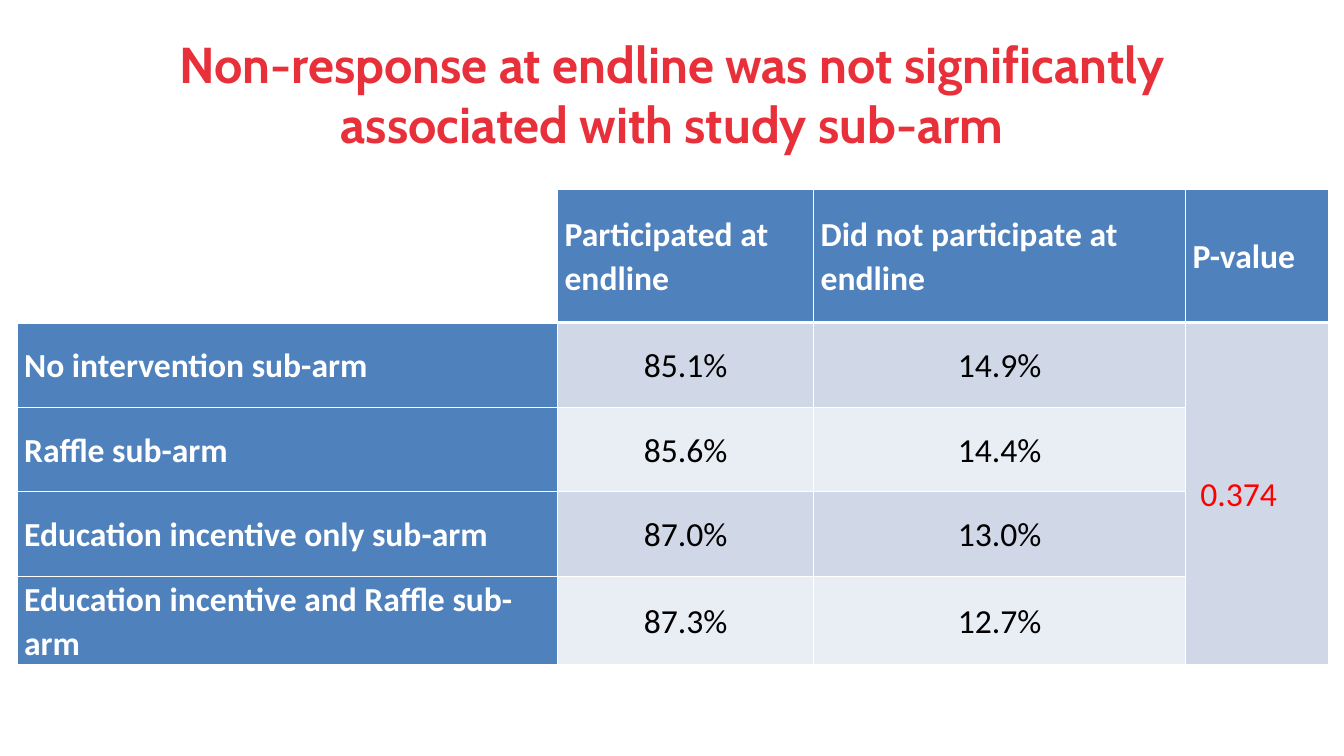
"""Build a slide with a table of endline participation by study sub-arm."""
from lxml import etree
from pptx import Presentation
from pptx.dml.color import RGBColor
from pptx.enum import text as t
from pptx.oxml.ns import qn
from pptx.util import Inches, Pt

TITLE = "Non-response at endline was not significantly associated with study sub-arm"
ROWS = [
    ("", "Participated at endline", "Did not participate at endline", "P-value"),
    ("No intervention sub-arm", "85.1%", "14.9%", " 0.374"),
    ("Raffle sub-arm", "85.6%", "14.4%", ""),
    ("Education incentive only sub-arm", "87.0%", "13.0%", ""),
    ("Education incentive and Raffle sub-arm", "87.3%", "12.7%", ""),
]
WIDTHS = (5.36, 2.54, 3.69, 1.42)
HEIGHTS = (1.32,) + (0.84,) * 4
COLORS = {"title": "E8303B", "head": "4F81BD", "odd": "D0D8E8", "even": "E9EDF4",
          "white": "FFFFFF", "black": "000000", "red": "FF0000"}
LEFT, CENTER = t.PP_ALIGN.LEFT, t.PP_ALIGN.CENTER
MIDDLE = t.MSO_ANCHOR.MIDDLE
PAD = {"margin_left": Inches(0.07), "margin_right": Inches(0.07),
       "margin_top": 0, "margin_bottom": 0, "vertical_anchor": MIDDLE}


def put(item, values):
    for key, value in values.items():
        setattr(item, key, value)


def rgb(name):
    return RGBColor.from_string(COLORS[name])


def style(par, name, size, color, bold, align):
    par.alignment = align
    put(par.font, {"name": name, "size": Pt(size), "bold": bold})
    par.font.color.rgb = rgb(color)


def edge(cell, row):
    props = cell._tc.get_or_add_tcPr()
    for spot, side in enumerate("LRTB"):
        thick = (side == "B" and row == 0) or (side == "T" and row == 1)
        line = etree.Element(qn("a:ln" + side), w=str(Pt(3 if thick else 1)))
        fill = etree.SubElement(line, qn("a:solidFill"))
        etree.SubElement(fill, qn("a:srgbClr"), val=COLORS["white"])
        props.insert(spot, line)


def look(row, col):
    if row == 0 or col == 0:
        return "head", "white", True, LEFT
    if col == 3:
        return "odd", "red", False, LEFT
    return ("odd" if row % 2 else "even"), "black", False, CENTER


def main():
    deck = Presentation()
    put(deck, {"slide_width": Inches(13.33), "slide_height": Inches(7.5)})
    slide = deck.slides.add_slide(deck.slide_layouts[5])

    title = slide.shapes.title
    put(title, {"left": Inches(0.82), "top": Inches(0.3),
                "width": Inches(11.69), "height": Inches(1.25)})
    title.text_frame.text = TITLE
    title.text_frame.vertical_anchor = MIDDLE
    style(title.text_frame.paragraphs[0], "Cabin", 36, "title", True, CENTER)

    grid = slide.shapes.add_table(len(ROWS), len(WIDTHS), Inches(0.17), Inches(1.88),
                                  Inches(sum(WIDTHS)), Inches(sum(HEIGHTS))).table
    for col, width in zip(grid.columns, WIDTHS):
        col.width = Inches(width)
    for row, height in zip(grid.rows, HEIGHTS):
        row.height = Inches(height)

    for r, words in enumerate(ROWS):
        for c, word in enumerate(words):
            cell = grid.cell(r, c)
            back, color, bold, align = look(r, c)
            put(cell, PAD)
            cell.text = word
            par = cell.text_frame.paragraphs[0]
            par.line_spacing = 1.07
            style(par, "Calibri", 24, color, bold, align)
            if r == c == 0:
                cell.fill.background()
            else:
                cell.fill.solid()
                cell.fill.fore_color.rgb = rgb(back)
            edge(cell, r)
    grid.cell(1, 3).merge(grid.cell(4, 3))
    deck.save("out.pptx")


if __name__ == "__main__":
    main()
